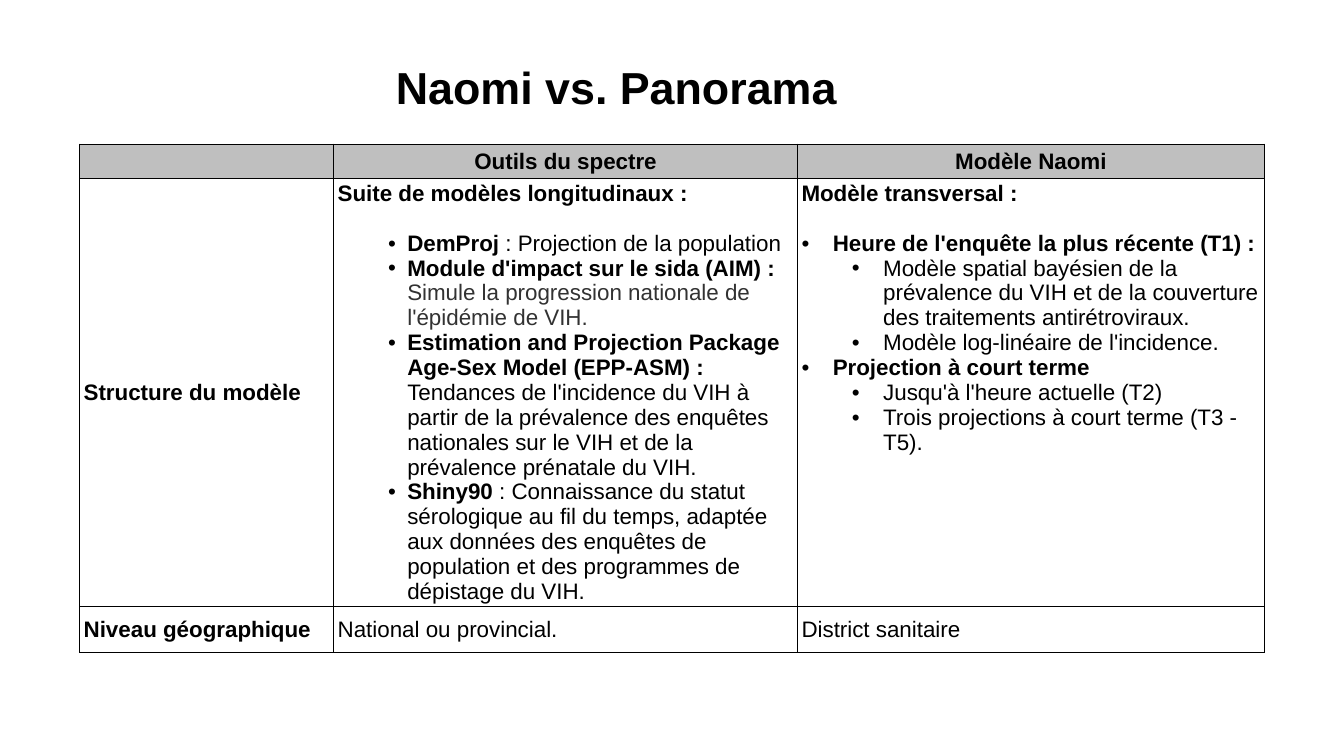
from lxml import etree
from pptx import Presentation
from pptx.dml.color import RGBColor
from pptx.enum.text import MSO_ANCHOR, PP_ALIGN
from pptx.oxml.ns import qn
from pptx.util import Inches, Pt

CENTER, LEFT = PP_ALIGN.CENTER, PP_ALIGN.LEFT
TOP, MIDDLE = MSO_ANCHOR.TOP, MSO_ANCHOR.MIDDLE

COLORS = {"text": "000000", "muted": "323232", "header": "BFBFBF", "border": "000000"}

# Bullet styles: level, left margin and hanging indent in inches
TOOL = (1, 0.69, 0.19)
STAGE = (0, 0.31, 0.31)
DETAIL = (1, 0.81, 0.31)

# Each paragraph: bullet style, then runs of (text, bold, colour)
TOOLS = [
    (None, [("Suite de modèles longitudinaux :", True, "text")]),
    (TOOL, [("DemProj ", True, "text"), (": Projection de la population", False, "text")]),
    (TOOL, [("Module d'impact sur le sida (AIM) : ", True, "text"),
            ("Simule la progression nationale de l'épidémie de VIH.", False, "muted")]),
    (TOOL, [("Estimation and Projection Package Age-Sex Model (EPP-ASM) : ", True, "text"),
            ("Tendances de l'incidence du VIH à partir de la prévalence des enquêtes "
             "nationales sur le VIH et de la prévalence prénatale du VIH.", False, "text")]),
    (TOOL, [("Shiny90 ", True, "text"),
            (": Connaissance du statut sérologique au fil du temps, adaptée aux données "
             "des enquêtes de population et des programmes de dépistage du VIH.",
             False, "text")]),
]
NAOMI = [
    (None, [("Modèle transversal :", True, "text")]),
    (STAGE, [("Heure de l'enquête la plus récente (T1) :", True, "text")]),
    (DETAIL, [("Modèle spatial bayésien de la prévalence du VIH et de la couverture "
               "des traitements antirétroviraux.", False, "text")]),
    (DETAIL, [("Modèle log-linéaire de l'incidence.", False, "text")]),
    (STAGE, [("Projection à court terme", True, "text")]),
    (DETAIL, [("Jusqu'à l'heure actuelle (T2)", False, "text")]),
    (DETAIL, [("Trois projections à court terme (T3 - T5).", False, "text")]),
]


def line(text, bold=False):
    return [(None, [(text, bold, "text")])]


class SlideBuilder:
    def __init__(self, slide, font="Arial", body_size=16):
        self.slide = slide
        self.font = font
        self.body_size = body_size

    def add_run(self, paragraph, text, size, bold, color):
        run = paragraph.add_run()
        run.text = text
        run.font.name = self.font
        run.font.size = Pt(size)
        run.font.bold = bold
        run.font.color.rgb = RGBColor.from_string(COLORS[color])

    def add_bullet(self, paragraph, style):
        level, margin, hanging = style
        paragraph.level = level
        properties = paragraph._p.get_or_add_pPr()
        properties.set("marL", str(Inches(margin)))
        properties.set("indent", str(-Inches(hanging)))
        etree.SubElement(properties, qn("a:buFont"), typeface=self.font)
        etree.SubElement(properties, qn("a:buChar"), char="•")

    def add_title(self, text, left, top, width, height):
        shape = self.slide.shapes.add_textbox(
            Inches(left), Inches(top), Inches(width), Inches(height))
        shape.text_frame.word_wrap = True
        paragraph = shape.text_frame.paragraphs[0]
        paragraph.alignment = CENTER
        paragraph.line_spacing = 0.9
        self.add_run(paragraph, text, 32, True, "text")

    def set_borders(self, cell):
        properties = cell._tc.get_or_add_tcPr()
        for side in ("lnL", "lnR", "lnT", "lnB"):
            border = etree.SubElement(properties, qn(f"a:{side}"), w=str(Pt(1)))
            fill = etree.SubElement(border, qn("a:solidFill"))
            etree.SubElement(fill, qn("a:srgbClr"), val=COLORS["border"])

    def fill_cell(self, cell, content, alignment, anchor, fill):
        self.set_borders(cell)
        if fill:
            cell.fill.solid()
            cell.fill.fore_color.rgb = RGBColor.from_string(COLORS[fill])
        else:
            cell.fill.background()
        cell.vertical_anchor = anchor
        cell.margin_left = cell.margin_right = Inches(0.04)
        cell.margin_top = cell.margin_bottom = Inches(0.02)
        for index, (bullet, runs) in enumerate(content):
            frame = cell.text_frame
            paragraph = frame.add_paragraph() if index else frame.paragraphs[0]
            paragraph.alignment = alignment
            if index == 1:
                paragraph.space_before = Pt(18)
            if bullet:
                self.add_bullet(paragraph, bullet)
            for text, bold, color in runs:
                self.add_run(paragraph, text, self.body_size, bold, color)

    def add_table(self, rows, left, top, widths, heights):
        table = self.slide.shapes.add_table(
            len(heights), len(widths), Inches(left), Inches(top),
            Inches(sum(widths)), Inches(sum(heights))).table
        table.horz_banding = False
        for column, width in zip(table.columns, widths):
            column.width = Inches(width)
        for row, height in zip(table.rows, heights):
            row.height = Inches(height)
        for row_index, contents in enumerate(rows):
            is_header = row_index == 0
            for column_index, content in enumerate(contents):
                self.fill_cell(
                    table.cell(row_index, column_index), content,
                    CENTER if is_header else LEFT,
                    TOP if len(content) > 1 else MIDDLE,
                    "header" if is_header else None)


def main():
    presentation = Presentation()
    presentation.slide_width = Inches(13.33)
    presentation.slide_height = Inches(7.5)
    builder = SlideBuilder(presentation.slides.add_slide(presentation.slide_layouts[6]))

    # Comparison table
    rows = [
        [[], line("Outils du spectre", True), line("Modèle Naomi", True)],
        [line("Structure du modèle", True), TOOLS, NAOMI],
        [line("Niveau géographique", True), line("National ou provincial."),
         line("District sanitaire")],
    ]
    builder.add_table(rows, 0.79, 1.43, [2.52, 4.6, 4.63], [0.34, 4.23, 0.46])

    # Title
    builder.add_title("Naomi vs. Panorama", 1.43, 0.6, 9.37, 0.82)

    presentation.save("out.pptx")


if __name__ == "__main__":
    main()
